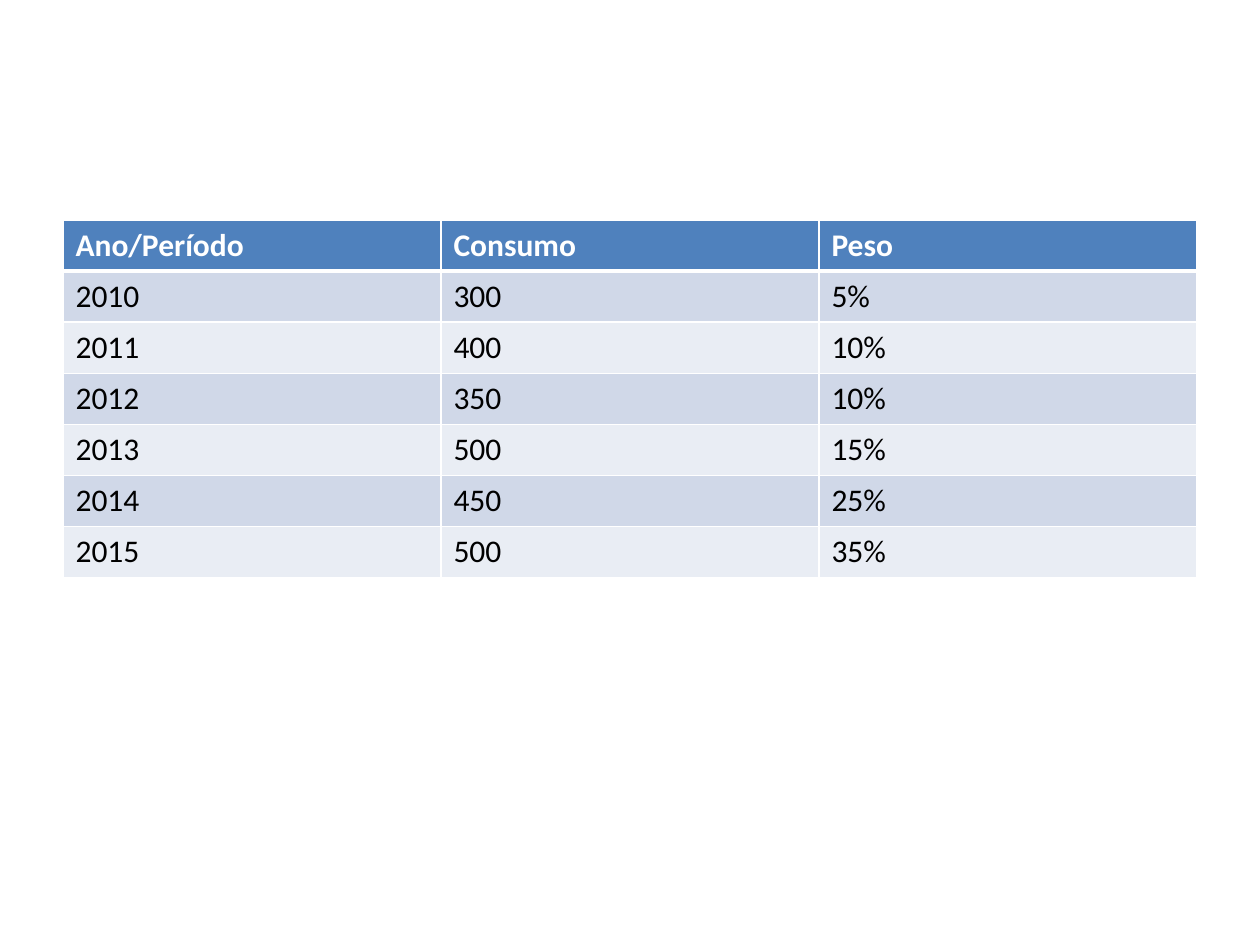
from lxml import etree
from pptx import Presentation
from pptx import util as u
from pptx.dml.color import RGBColor
from pptx.oxml.ns import qn

PX = u.Inches(1) // 126
WHITE = RGBColor(0xFF, 0xFF, 0xFF)
BLACK = RGBColor(0x00, 0x00, 0x00)
HEADER = RGBColor(0x4F, 0x81, 0xBD)
BAND_DARK = RGBColor(0xD0, 0xD8, 0xE8)
BAND_LIGHT = RGBColor(0xE9, 0xED, 0xF4)

LEFT, TOP, COL_W, ROW_H = 63, 220, 378, 51
ROWS = [
    ("Ano/Período", "Consumo", "Peso"),
    ("2010", "300", "5%"),
    ("2011", "400", "10%"),
    ("2012", "350", "10%"),
    ("2013", "500", "15%"),
    ("2014", "450", "25%"),
    ("2015", "500", "35%"),
]


def add_border(cell, side, width):
    """Draw a white line on one side (L, R, T or B); call before filling the cell."""
    tcPr = cell._tc.get_or_add_tcPr()
    ln = etree.SubElement(tcPr, qn(f"a:ln{side}"), w=str(u.Pt(width)))
    fill = etree.SubElement(ln, qn("a:solidFill"))
    etree.SubElement(fill, qn("a:srgbClr"), val=str(WHITE))


prs = Presentation()
prs.slide_width, prs.slide_height = u.Inches(10), u.Inches(7.5)
s = prs.slides.add_slide(prs.slide_layouts[6])

n_rows, n_cols = len(ROWS), len(ROWS[0])
table = s.shapes.add_table(
    n_rows, n_cols, LEFT * PX, TOP * PX, n_cols * COL_W * PX, n_rows * ROW_H * PX
).table

for i, values in enumerate(ROWS):
    is_header = i == 0
    band = BAND_DARK if i % 2 else BAND_LIGHT
    for j, value in enumerate(values):
        cell = table.cell(i, j)
        for side in "LRTB":
            under_header = (i, side) in ((0, "B"), (1, "T"))
            add_border(cell, side, 3 if under_header else 1)
        cell.fill.solid()
        cell.fill.fore_color.rgb = HEADER if is_header else band
        cell.text = value
        font = cell.text_frame.paragraphs[0].font
        font.name, font.size, font.bold = "Calibri", u.Pt(18), is_header
        font.color.rgb = WHITE if is_header else BLACK

prs.save("out.pptx")
